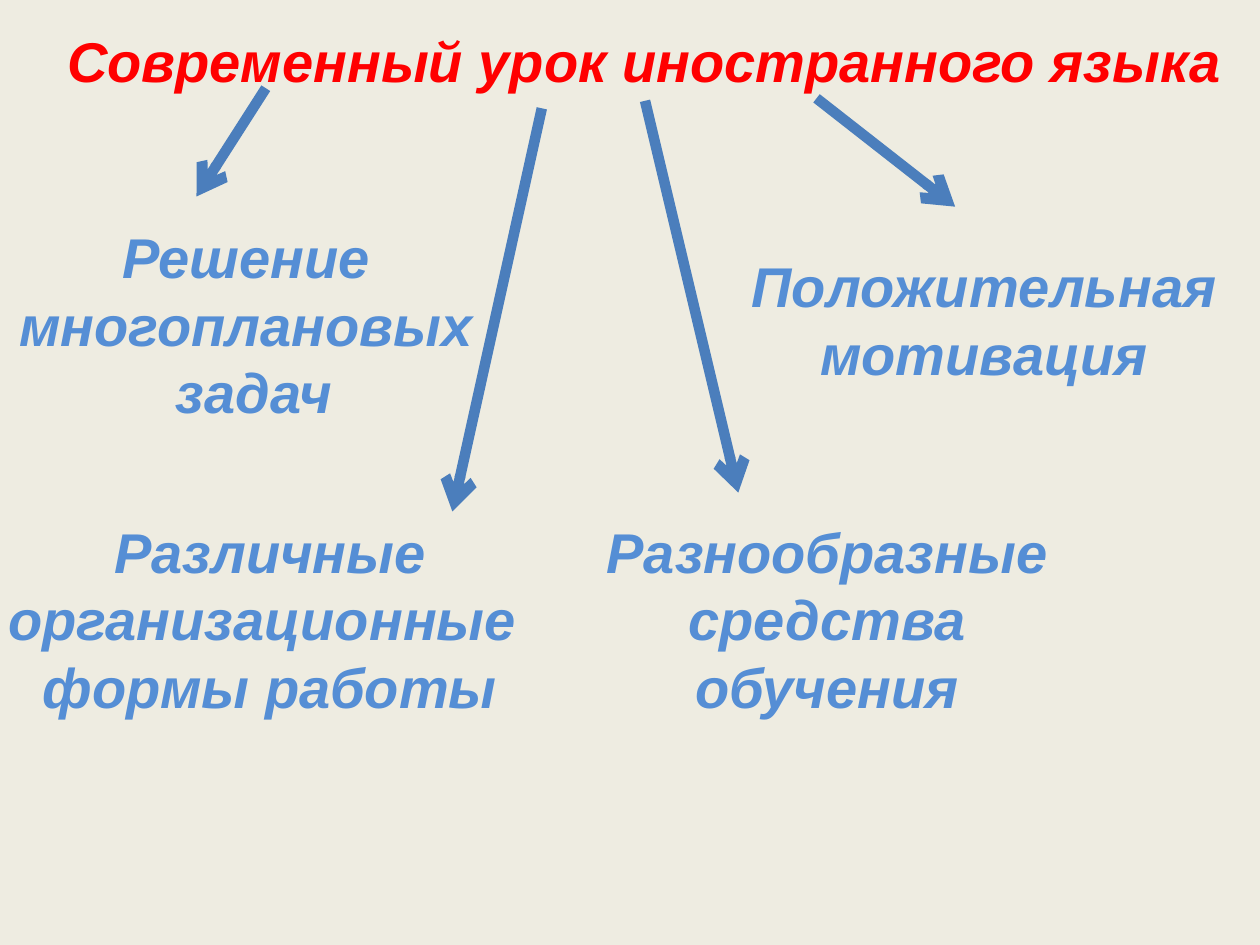
"""Builds a slide on the features of a modern foreign language lesson."""
from lxml.etree import SubElement
from pptx import Presentation
from pptx.dml.color import RGBColor
from pptx.enum.shapes import MSO_CONNECTOR as CONN
from pptx.enum.text import MSO_AUTO_SIZE as AUTO, PP_ALIGN as ALIGN
from pptx.oxml.ns import qn
from pptx.util import Pt

RED = RGBColor(0xFF, 0x00, 0x00)
SKY = RGBColor(0x55, 0x8E, 0xD5)
STEEL = RGBColor(0x4B, 0x7E, 0xBC)
CREAM = RGBColor(0xEE, 0xEC, 0xE1)
LOWER_TOP = 292.3

FEATURES = [
    ("Решение многоплановых\n задач", (0, 123.8, 281.5, 123.8)),
    ("Различные организационные \nформы работы", (-39.6, LOWER_TOP, 388, 123.8)),
    ("Разнообразные средства обучения", (309.6, LOWER_TOP, 326.2, 123.8)),
    ("Положительная мотивация", (416.2, 140.4, 292.3, 85)),
]
ARROWS = [
    (151.9, 50.4, 112.3, 112.3),
    (309.6, 61.9, 258.5, 292.3),
    (368.6, 57.6, 421.9, 281.5),
    (466.6, 56.2, 545.8, 118.1),
]


def write(tf, text, size=32, color=SKY, font="Arial", align=ALIGN.CENTER):
    for i, line in enumerate(text.split("\n")):
        p = tf.add_paragraph() if i else tf.paragraphs[0]
        p.alignment = align
        r = p.add_run()
        r.text = line
        r.font.name, r.font.size = font, Pt(size)
        r.font.bold = r.font.italic = True
        r.font.color.rgb = color


class Deck:
    def __init__(self, width, height, background):
        self.prs = Presentation()
        self.prs.slide_width, self.prs.slide_height = Pt(width), Pt(height)
        self.background = background
        self.s = None

    def slide(self):
        self.s = self.prs.slides.add_slide(self.prs.slide_layouts[6])
        fill = self.s.background.fill
        fill.solid()
        fill.fore_color.rgb = self.background

    def text(self, text, box, **style):
        tf = self.s.shapes.add_textbox(*map(Pt, box)).text_frame
        tf.word_wrap = True
        tf.auto_size = AUTO.SHAPE_TO_FIT_TEXT
        write(tf, text, **style)

    def arrow(self, ends, color=STEEL, width=6):
        sp = self.s.shapes.add_connector(CONN.STRAIGHT, *map(Pt, ends))
        sp.line.color.rgb = color
        sp.line.width = Pt(width)
        SubElement(sp.line._get_or_add_ln(), qn("a:tailEnd"), type="arrow")
        SubElement(sp._element.spPr, qn("a:effectLst"))


def main():
    deck = Deck(720, 540, CREAM)
    deck.slide()
    deck.text("Современный урок иностранного языка", (16.6, 11.5, 703.4, 46), color=RED)
    for (text, box), ends in zip(FEATURES, ARROWS):
        deck.arrow(ends)
        deck.text(text, box)
    deck.prs.save("out.pptx")


if __name__ == "__main__":
    main()
